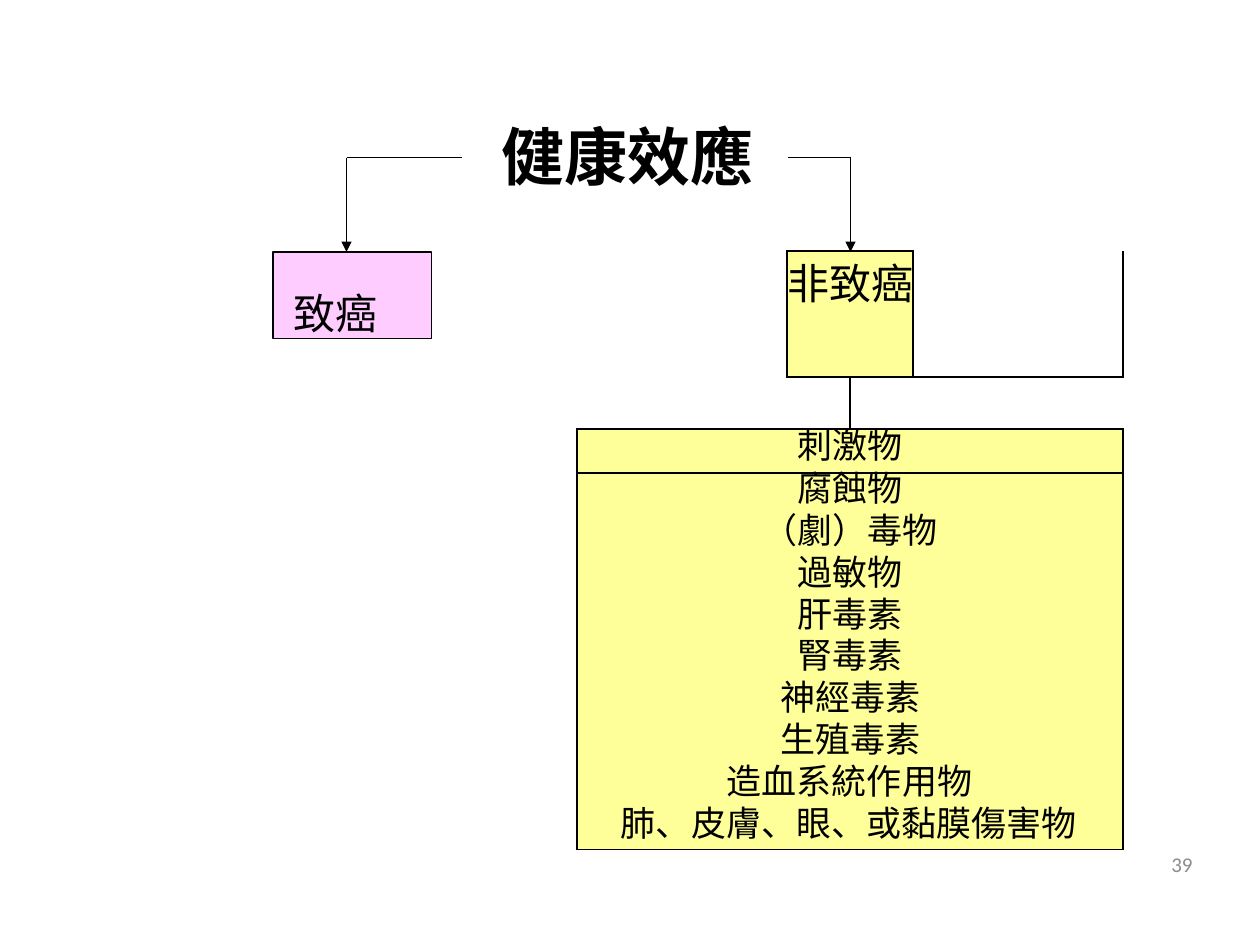
from pptx import Presentation
from pptx.dml.color import RGBColor
from pptx.enum.shapes import MSO_CONNECTOR, MSO_SHAPE
from pptx.enum.text import MSO_ANCHOR, PP_ALIGN
from pptx.oxml.ns import qn
from pptx.util import Pt
from lxml.etree import SubElement

BLACK = RGBColor(0x00, 0x00, 0x00)
PINK = RGBColor(0xFF, 0xCC, 0xFF)
YELLOW = RGBColor(0xFF, 0xFF, 0x99)
GRAY = RGBColor(0x8C, 0x8C, 0x8C)

NO_STYLE = "{2D5ABB26-0587-4C30-8999-92F81FD0307C}"
HEADING = dict(name="Noto Sans CJK SC", size=Pt(36), bold=True)
LABEL = dict(name="Roboto", size=Pt(24))
ITEM = dict(name="Roboto", size=Pt(20))
NUMBER = dict(name="Calibri", size=Pt(12))

COLUMNS = (120, 36, 36, 120)
ITEMS = ("刺激物", "腐蝕物", "（劇）毒物", "過敏物", "肝毒素", "腎毒素",
         "神經毒素", "生殖毒素", "造血系統作用物", "肺、皮膚、眼、或黏膜傷害物")
ITEM_INDENTS = {"造血系統作用物": 85.5, "肺、皮膚、眼、或黏膜傷害物": 25}
ROWS = (72, 30, 25) + (23.9,) * (len(ITEMS) - 1)


def write(tf, text, font, color=BLACK, align=PP_ALIGN.LEFT, indent=0, line=None):
    p = tf.paragraphs[0]
    r = p.add_run()
    r.text = text
    for key, value in font.items():
        setattr(r.font, key, value)
    r.font.color.rgb = color
    p.alignment = align
    if indent:
        p._p.get_or_add_pPr().set("marL", str(Pt(indent)))
        p._p.get_or_add_pPr().set("indent", "0")
    if line:
        p.line_spacing = Pt(line)


def set_margins(target, top=0):
    for side in ("left", "right", "bottom"):
        setattr(target, f"margin_{side}", 0)
    target.margin_top = Pt(top)


def place(sp, left, top, width, height):
    sp.left, sp.top, sp.width, sp.height = map(Pt, (left, top, width, height))


def add_title(s):
    title = s.shapes.title
    place(title, 39.6, 62, 610.5, 53.3)
    tf = title.text_frame
    set_margins(tf)
    tf.vertical_anchor = MSO_ANCHOR.MIDDLE
    write(tf, "健康效應", HEADING, align=PP_ALIGN.CENTER, indent=28)


def add_box(s, text):
    sp = s.shapes.add_shape(MSO_SHAPE.RECTANGLE, Pt(156), Pt(144), Pt(90.7), Pt(49.5))
    sp.shadow.inherit = False
    sp.fill.solid()
    sp.fill.fore_color.rgb = PINK
    sp.line.color.rgb = BLACK
    sp.line.width = Pt(1)
    tf = sp.text_frame
    set_margins(tf, top=20.1)
    tf.vertical_anchor = MSO_ANCHOR.TOP
    tf.word_wrap = True
    write(tf, text, LABEL, indent=11.5)


def add_line(s, x1, y1, x2, y2, arrow=False):
    line = s.shapes.add_connector(MSO_CONNECTOR.STRAIGHT, *map(Pt, (x1, y1, x2, y2)))
    line.line.color.rgb = BLACK
    line.line.width = Pt(1)
    if arrow:
        SubElement(line.line._get_or_add_ln(), qn("a:tailEnd"), type="triangle")
    SubElement(line._element.spPr, qn("a:effectLst"))


def add_branch(s, start, end):
    """Run level from start to end, then down to the box below."""
    add_line(s, start, 90, end, 90)
    add_line(s, end, 90, end, 144, arrow=True)


def format_cell(cell, sides="", fill=None):
    """Draw the borders named by L, R, T and B, then the fill."""
    set_margins(cell)
    tcPr = cell._tc.get_or_add_tcPr()
    for side in sides:
        ln = SubElement(tcPr, qn(f"a:ln{side}"), w=str(Pt(1)))
        SubElement(SubElement(ln, qn("a:solidFill")), qn("a:srgbClr"), val=str(BLACK))
    if fill is None:
        cell.fill.background()
    else:
        cell.fill.solid()
        cell.fill.fore_color.rgb = fill


def add_effects_table(s):
    frame = s.shapes.add_table(len(ROWS), len(COLUMNS), Pt(329.8), Pt(143.3),
                               Pt(sum(COLUMNS)), Pt(sum(ROWS)))
    table = frame.table
    table.first_row = table.horz_banding = False
    table._tbl.tblPr.find(qn("a:tableStyleId")).text = NO_STYLE
    for column, width in zip(table.columns, COLUMNS):
        column.width = Pt(width)
    for row, height in zip(table.rows, ROWS):
        row.height = Pt(height)

    label = table.cell(0, 1)
    label.merge(table.cell(0, 2))
    format_cell(table.cell(0, 0), "R")
    format_cell(label, "LRTB", YELLOW)
    format_cell(table.cell(0, 3), "LRB")
    write(label.text_frame, "非致癌", LABEL)

    for col, sides in ((0, "RB"), (2, "LB")):
        stem = table.cell(1, col)
        stem.merge(table.cell(1, col + 1))
        format_cell(stem, sides)

    for row, text in enumerate(ITEMS, start=2):
        cell = table.cell(row, 0)
        cell.merge(table.cell(row, 3))
        first, last = text == ITEMS[0], text == ITEMS[-1]
        format_cell(cell, "LRTB" if first else "LRB" if last else "LR", YELLOW)
        indent = ITEM_INDENTS.get(text, 0)
        write(cell.text_frame, text, ITEM, indent=indent,
              align=PP_ALIGN.LEFT if indent else PP_ALIGN.CENTER,
              line=22.7 if first else 22.1)


def add_slide_number(s, text):
    tf = s.shapes.add_textbox(Pt(520.5), Pt(479.5), Pt(168), Pt(28.8)).text_frame
    tf.word_wrap = True
    tf.vertical_anchor = MSO_ANCHOR.MIDDLE
    write(tf, text, NUMBER, GRAY, PP_ALIGN.RIGHT)


def main():
    prs = Presentation()
    prs.slide_width, prs.slide_height = Pt(720), Pt(540)
    s = prs.slides.add_slide(prs.slide_layouts[5])
    add_title(s)
    add_box(s, "致癌")
    add_branch(s, 264, 198)
    add_branch(s, 450, 486)
    add_effects_table(s)
    add_slide_number(s, "39")
    prs.save("out.pptx")


if __name__ == "__main__":
    main()
